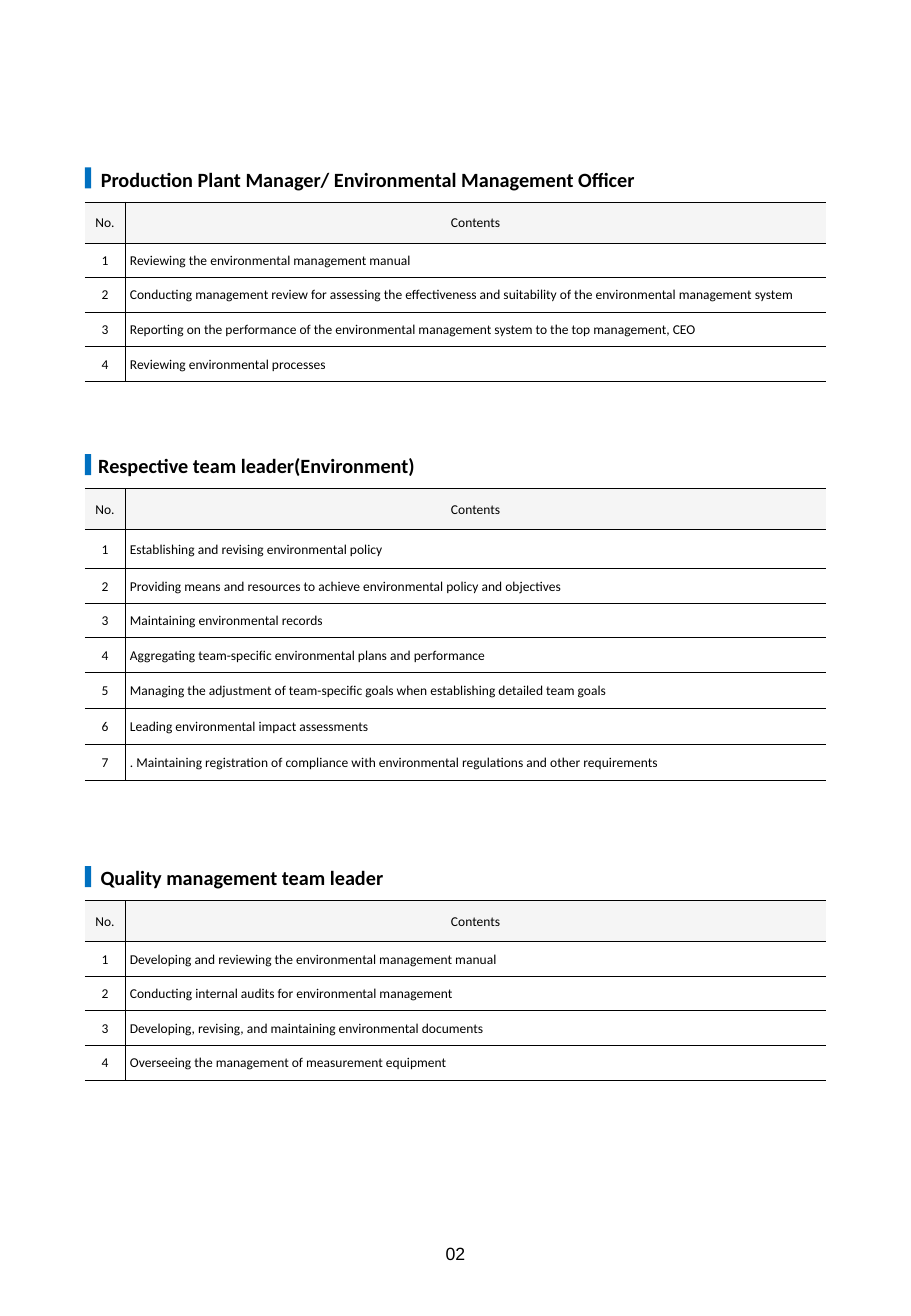
from dataclasses import dataclass

from lxml import etree
from pptx import Presentation
from pptx.dml.color import RGBColor
from pptx.enum.shapes import MSO_SHAPE
from pptx.enum.text import MSO_ANCHOR, MSO_AUTO_SIZE, PP_ALIGN
from pptx.oxml.ns import qn
from pptx.util import Inches, Pt

RECTANGLE = MSO_SHAPE.RECTANGLE
TOP, MIDDLE = MSO_ANCHOR.TOP, MSO_ANCHOR.MIDDLE
LEFT, CENTER = PP_ALIGN.LEFT, PP_ALIGN.CENTER
FIT_TEXT = MSO_AUTO_SIZE.SHAPE_TO_FIT_TEXT

PAGE_WIDTH = Inches(7.5)
PAGE_HEIGHT = Inches(10.83)


@dataclass(frozen=True)
class Theme:
    ink: str = "000000"
    accent: str = "0070C0"
    header_fill: str = "F5F5F5"
    body_fill: str = "FFFFFF"
    font: str = "Calibri"
    number_font: str = "Arial"
    heading_size: float = 12
    table_size: float = 8
    number_size: float = 10.5
    rule_width: float = 0.25


@dataclass(frozen=True)
class Section:
    heading: str
    heading_left: float
    heading_width: float
    table_top: float
    row_heights: tuple
    contents: tuple


THEME = Theme()
MARGIN = 9.33
COLUMN_WIDTHS = (4.4, 76.97)
HEADER_HEIGHT = 3.12
ROW = 2.63
HEADING_RISE = 3.1
MARKER_RISE = 2.6
HEADING_HEIGHT = 2.8

SECTIONS = (
    Section(
        "Production Plant Manager/ Environmental Management Officer",
        9.73, 82.93, 15.33, (ROW,) * 4,
        (
            "Reviewing the environmental management manual",
            "Conducting management review for assessing the effectiveness and suitability "
            "of the environmental management system",
            "Reporting on the performance of the environmental management system "
            "to the top management, CEO",
            "Reviewing environmental processes",
        ),
    ),
    Section(
        "Respective team leader(Environment)",
        9.47, 50.13, 37.12, (2.96,) + (ROW,) * 3 + (2.73,) * 3,
        (
            "Establishing and revising environmental policy",
            "Providing means and resources to achieve environmental policy and objectives",
            "Maintaining environmental records",
            "Aggregating team-specific environmental plans and performance",
            "Managing the adjustment of team-specific goals when establishing detailed team goals",
            "Leading environmental impact assessments",
            ". Maintaining registration of compliance with environmental regulations "
            "and other requirements",
        ),
    ),
    Section(
        "Quality management team leader",
        9.73, 50.13, 68.42, (ROW,) * 4,
        (
            "Developing and reviewing the environmental management manual",
            "Conducting internal audits for environmental management",
            "Developing, revising, and maintaining environmental documents",
            "Overseeing the management of measurement equipment",
        ),
    ),
)


def across(percent):
    return round(PAGE_WIDTH * percent / 100)


def down(percent):
    return round(PAGE_HEIGHT * percent / 100)


def area(left, top, width, height):
    return across(left), down(top), across(width), down(height)


def write(frame, text, size, font=THEME.font, bold=False, align=LEFT):
    frame.word_wrap = True
    para = frame.paragraphs[0]
    para.alignment = align
    span = para.add_run()
    span.text = text
    span.font.name = font
    span.font.size = Pt(size)
    span.font.bold = bold
    span.font.color.rgb = RGBColor.from_string(THEME.ink)


def place_text(box, place, text, size, **style):
    box.left, box.top, box.width, box.height = place
    frame = box.text_frame
    frame.vertical_anchor = TOP
    write(frame, text, size, **style)
    frame.auto_size = FIT_TEXT


def add_text_box(page, place):
    return page.shapes.add_textbox(*place)


def add_marker(page, place):
    marker = page.shapes.add_shape(RECTANGLE, *place)
    marker.shadow.inherit = False
    marker.fill.solid()
    marker.fill.fore_color.rgb = RGBColor.from_string(THEME.accent)
    marker.line.fill.background()


def set_borders(cell, visible):
    properties = cell._tc.get_or_add_tcPr()
    for side in ("lnL", "lnR", "lnT", "lnB"):
        line = etree.SubElement(properties, qn(f"a:{side}"), w=str(Pt(THEME.rule_width)))
        if side in visible:
            fill = etree.SubElement(line, qn("a:solidFill"))
            etree.SubElement(fill, qn("a:srgbClr"), val=THEME.ink)
        else:
            etree.SubElement(line, qn("a:noFill"))


def fill_cell(cell, text, fill, align, inner_side):
    set_borders(cell, ("lnT", "lnB", inner_side))
    cell.fill.solid()
    cell.fill.fore_color.rgb = RGBColor.from_string(fill)
    cell.vertical_anchor = MIDDLE
    cell.margin_left = Inches(0.04 if align == LEFT else 0.01)
    cell.margin_right = cell.margin_top = Inches(0.01)
    cell.margin_bottom = 0
    write(cell.text_frame, text, THEME.table_size, align=align)


def add_duty_table(page, section):
    heights = (HEADER_HEIGHT,) + section.row_heights
    place = area(MARGIN, section.table_top, sum(COLUMN_WIDTHS), sum(heights))
    table = page.shapes.add_table(len(heights), len(COLUMN_WIDTHS), *place).table
    for column, width in zip(table.columns, COLUMN_WIDTHS):
        column.width = across(width)
    for row, height in zip(table.rows, heights):
        row.height = down(height)
    entries = [("No.", "Contents")]
    entries += [(str(number), text) for number, text in enumerate(section.contents, 1)]
    for index, (number, text) in enumerate(entries):
        fill = THEME.body_fill if index else THEME.header_fill
        fill_cell(table.cell(index, 0), number, fill, CENTER, "lnR")
        fill_cell(table.cell(index, 1), text, fill, LEFT if index else CENTER, "lnL")


def add_section(page, section, title=None):
    place = area(section.heading_left, section.table_top - HEADING_RISE,
                 section.heading_width, HEADING_HEIGHT)
    box = title or add_text_box(page, place)
    place_text(box, place, section.heading, THEME.heading_size, bold=True)
    add_marker(page, area(MARGIN, section.table_top - MARKER_RISE, 0.67, 1.6))
    add_duty_table(page, section)


def add_page_number(page, text):
    place = area(42, 94, 16, 2.7)
    place_text(add_text_box(page, place), place, text, THEME.number_size,
               font=THEME.number_font, align=CENTER)


def main():
    deck = Presentation()
    deck.slide_width, deck.slide_height = PAGE_WIDTH, PAGE_HEIGHT
    page = deck.slides.add_slide(deck.slide_layouts.get_by_name("Title Only"))
    first, *others = SECTIONS
    add_section(page, first, title=page.shapes.title)
    for section in others:
        add_section(page, section)
    add_page_number(page, "02")
    deck.save("out.pptx")


if __name__ == "__main__":
    main()
